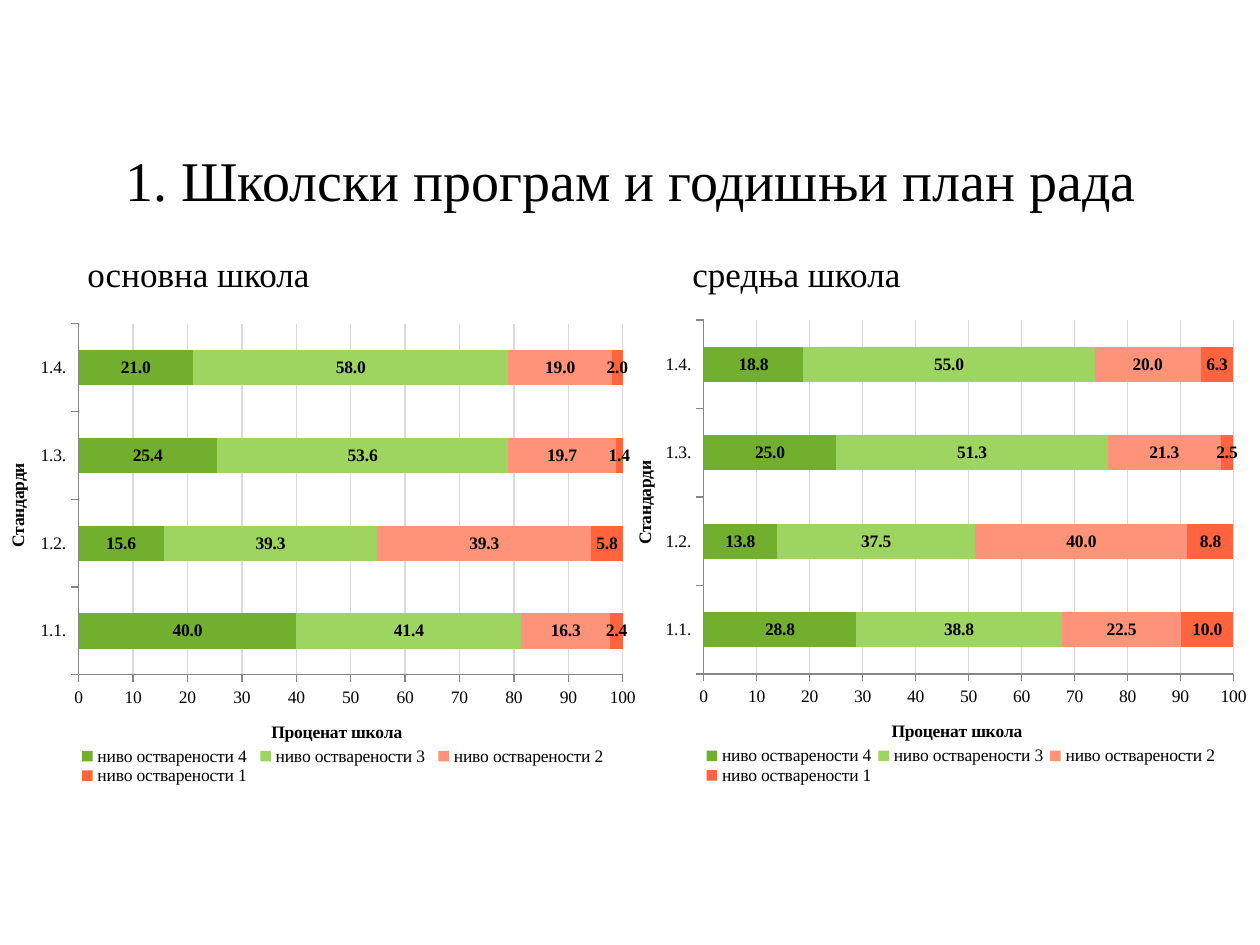
from dataclasses import dataclass

from lxml.etree import SubElement
from pptx import Presentation
from pptx.chart.data import CategoryChartData
from pptx.dml.color import RGBColor
from pptx.enum.chart import (
    XL_CHART_TYPE as ChartType,
    XL_LABEL_POSITION as LabelPosition,
    XL_LEGEND_POSITION as LegendPosition,
    XL_TICK_MARK as TickMark,
)
from pptx.enum.text import MSO_ANCHOR as Anchor, PP_ALIGN as Align
from pptx.oxml.ns import qn
from pptx.util import Emu, Pt

EMU_PER_PX = 914400 / 126


@dataclass(frozen=True)
class Theme:
    font: str = "Times New Roman"
    text: str = "000000"
    grid: str = "D9D9D9"
    axis: str = "868686"
    levels: tuple = ("72AF2F", "9ED561", "FF9379", "FF643F")
    title_size: int = 32
    heading_size: int = 20
    chart_size: int = 10


@dataclass(frozen=True)
class Box:
    left: int
    top: int
    width: int
    height: int

    def emu(self) -> list[Emu]:
        return [px(n) for n in (self.left, self.top, self.width, self.height)]


@dataclass(frozen=True)
class SchoolPanel:
    heading: str
    heading_box: Box
    chart_box: Box
    values: tuple  # one row per level, one value per standard


THEME = Theme()
STANDARDS = ("1.1.", "1.2.", "1.3.", "1.4.")
LEVEL_NAMES = [f"ниво остварености {level}" for level in (4, 3, 2, 1)]
PANELS = (
    SchoolPanel(
        "основна школа", Box(75, 246, 287, 55), Box(3, 305, 647, 485),
        ((40, 15.6, 25.4, 21), (41.4, 39.3, 53.6, 58),
         (16.3, 39.3, 19.7, 19), (2.4, 5.8, 1.4, 2)),
    ),
    SchoolPanel(
        "средња школа", Box(680, 246, 287, 55), Box(630, 301, 630, 489),
        ((28.8, 13.8, 25, 18.8), (38.8, 37.5, 51.3, 55),
         (22.5, 40, 21.3, 20), (10, 8.8, 2.5, 6.3)),
    ),
)


def px(length: int) -> Emu:
    return Emu(round(length * EMU_PER_PX))


def rgb(value: str) -> RGBColor:
    return RGBColor.from_string(value)


def style_font(font, size: int, bold: bool = False) -> None:
    font.name = THEME.font
    font.size = Pt(size)
    font.bold = bold
    font.color.rgb = rgb(THEME.text)


def add_text(slide, box: Box, text: str, size: int, align=Align.LEFT, anchor=Anchor.TOP) -> None:
    frame = slide.shapes.add_textbox(*box.emu()).text_frame
    frame.word_wrap = True
    frame.vertical_anchor = anchor
    paragraph = frame.paragraphs[0]
    paragraph.alignment = align
    run = paragraph.add_run()
    run.text = text
    style_font(run.font, size)


def place(element, index: int, target: str = "", **fractions: float) -> None:
    """Give a chart part a manual layout, as fractions of the chart."""
    layout = element.find(qn("c:layout"))
    if layout is None:
        layout = SubElement(element, qn("c:layout"))
        element.insert(index, layout)
    for child in list(layout):
        layout.remove(child)
    manual = SubElement(layout, qn("c:manualLayout"))
    if target:
        SubElement(manual, qn("c:layoutTarget")).set("val", target)
    for side in ("x", "y"):
        SubElement(manual, qn(f"c:{side}Mode")).set("val", "edge")
    for name, fraction in fractions.items():
        SubElement(manual, qn(f"c:{name}")).set("val", str(fraction))


def style_axis(axis, title: str, x: float, y: float) -> None:
    run = axis.axis_title.text_frame.paragraphs[0].add_run()
    run.text = title
    style_font(run.font, THEME.chart_size, bold=True)
    place(axis.axis_title._element, 1, x=x, y=y)
    axis.major_tick_mark = TickMark.OUTSIDE
    axis.minor_tick_mark = TickMark.NONE
    axis.format.line.color.rgb = rgb(THEME.axis)
    axis.format.line.width = Pt(0.75)


def add_level_chart(slide, panel: SchoolPanel) -> None:
    data = CategoryChartData(number_format="0.0")
    data.categories = STANDARDS
    for name, values in zip(LEVEL_NAMES, panel.values):
        data.add_series(name, values)
    chart = slide.shapes.add_chart(ChartType.BAR_STACKED, *panel.chart_box.emu(), data).chart
    style_font(chart.font, THEME.chart_size)
    chart.has_title = False

    # Bars and their labels
    plot = chart.plots[0]
    plot.gap_width = 150
    plot.overlap = 100
    plot.vary_by_categories = False
    for series, color in zip(plot.series, THEME.levels):
        series.format.fill.solid()
        series.format.fill.fore_color.rgb = rgb(color)
        labels = series.data_labels
        labels.show_value = True
        labels.number_format = "0.0"
        labels.number_format_is_linked = False
        labels.position = LabelPosition.CENTER
        style_font(labels.font, THEME.chart_size, bold=True)

    # Axes
    style_axis(chart.category_axis, "Стандарди", 0, 0.32)
    chart.category_axis.has_major_gridlines = False
    value_axis = chart.value_axis
    style_axis(value_axis, "Проценат школа", 0.41, 0.85)
    value_axis.minimum_scale = 0
    value_axis.maximum_scale = 100
    value_axis.major_unit = 10
    value_axis.tick_labels.number_format = "0"
    value_axis.tick_labels.number_format_is_linked = False
    grid_line = value_axis.major_gridlines.format.line
    grid_line.color.rgb = rgb(THEME.grid)
    grid_line.width = Pt(0.75)

    # Legend and plot area
    chart.has_legend = True
    chart.legend.position = LegendPosition.RIGHT
    chart.legend.include_in_layout = False
    style_font(chart.legend.font, THEME.chart_size)
    place(chart.legend._element, 1, x=0.11, y=0.91, w=0.83, h=0.08)
    plot_area = chart._chartSpace.find(f".//{qn('c:plotArea')}")
    place(plot_area, 0, "inner", x=0.117, y=0.039, w=0.841, h=0.724)


def main() -> None:
    presentation = Presentation()
    presentation.slide_width = px(1260)
    presentation.slide_height = px(945)
    slide = presentation.slides.add_slide(presentation.slide_layouts[6])

    # Slide title
    add_text(slide, Box(64, 135, 1134, 89), "1. Школски програм и годишњи план рада",
             THEME.title_size, Align.CENTER, Anchor.MIDDLE)

    # One heading and chart per school type
    for panel in PANELS:
        add_text(slide, panel.heading_box, panel.heading, THEME.heading_size)
    for panel in PANELS:
        add_level_chart(slide, panel)

    presentation.save("out.pptx")


if __name__ == "__main__":
    main()
